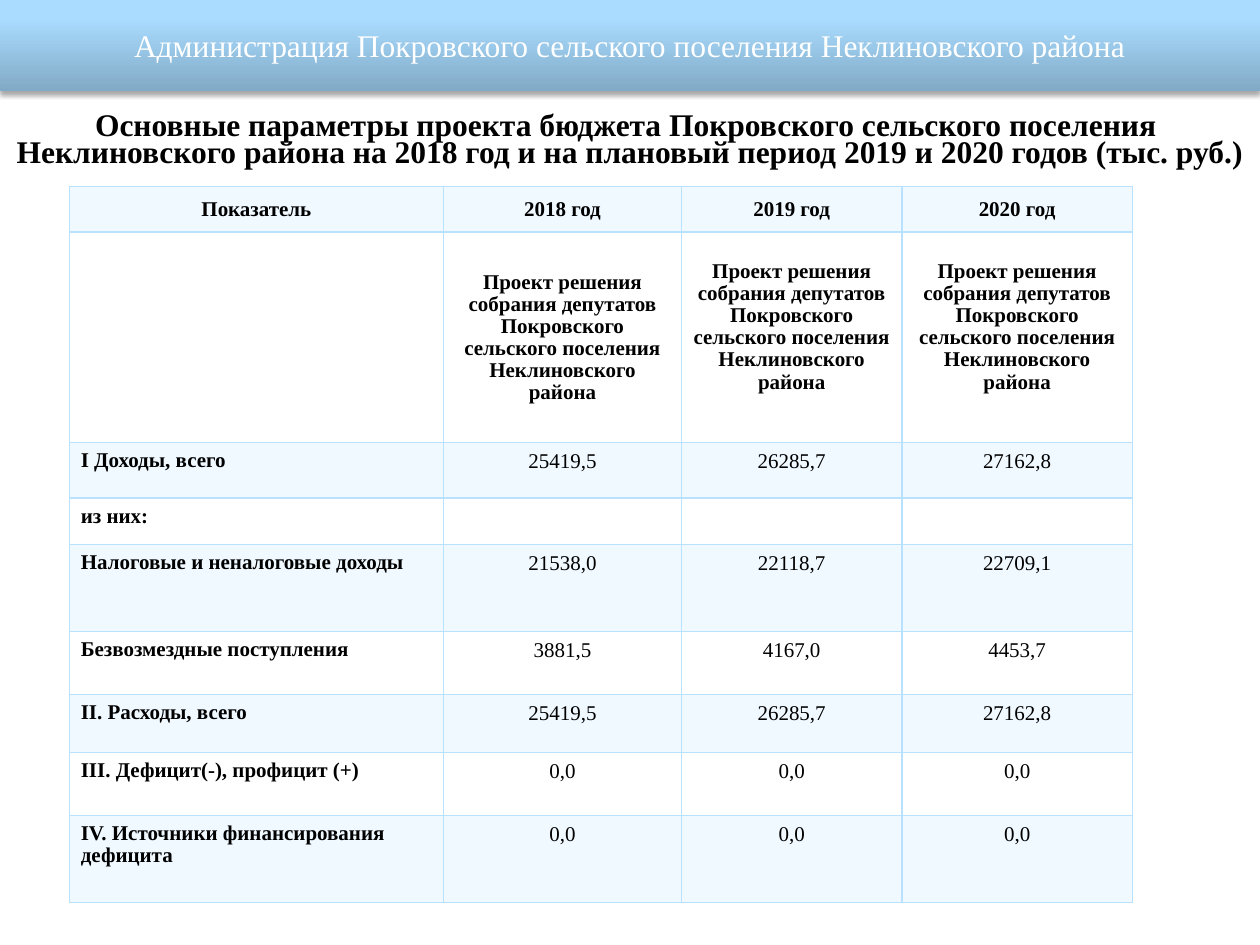
from lxml.etree import SubElement
from pptx import Presentation
from pptx.dml.color import RGBColor
from pptx.enum.shapes import MSO_SHAPE
from pptx.enum.text import MSO_ANCHOR, MSO_AUTO_SIZE, PP_ALIGN
from pptx.oxml import parse_xml
from pptx.oxml.ns import nsdecls, qn
from pptx.util import Cm, Pt

FONT = "Times New Roman"
SKY = "B8E2FF"
PROJECT = ("Проект решения собрания депутатов Покровского "
           "сельского поселения Неклиновского района")
COLS = [7.54, 4.8, 4.44, 4.65]
HEIGHTS = [0.92, 4.24, 1.12, 0.94, 1.75, 1.27, 1.17, 1.27, 1.75]
ROWS = [
    ["Показатель", "2018 год", "2019 год", "2020 год"],
    ["", PROJECT, PROJECT, PROJECT],
    ["I Доходы, всего", "25419,5", "26285,7", "27162,8"],
    ["из них:", "", "", ""],
    ["Налоговые и неналоговые доходы", "21538,0", "22118,7", "22709,1"],
    ["Безвозмездные поступления", "3881,5", "4167,0", "4453,7"],
    ["II. Расходы, всего", "25419,5", "26285,7", "27162,8"],
    ["III. Дефицит(-), профицит (+)", "0,0", "0,0", "0,0"],
    ["IV. Источники финансирования дефицита", "0,0", "0,0", "0,0"],
]


def rgb(color):
    """Turn a hex string into a colour."""
    return RGBColor.from_string(color)


def style(p, size, color, bold=False, align=PP_ALIGN.CENTER, spacing=1.0):
    """Set alignment, line spacing and font of a paragraph."""
    p.alignment = align
    p.line_spacing = spacing
    f = p.font
    f.name, f.size, f.bold = FONT, Pt(size), bold
    f.color.rgb = rgb(color)


def add_title(s, text):
    """Place the slide title in its placeholder."""
    sp = s.shapes.title
    sp.left, sp.top, sp.width, sp.height = Cm(0), Cm(1.73), Cm(25.4), Cm(1.8)
    tf = sp.text_frame
    tf.text = text
    tf.word_wrap = True
    tf.auto_size = MSO_AUTO_SIZE.NONE
    tf.vertical_anchor = MSO_ANCHOR.BOTTOM
    tf.margin_left = tf.margin_right = Cm(0.25)
    tf.margin_top, tf.margin_bottom = Cm(0.03), Cm(0.13)
    style(tf.paragraphs[0], 18, "000000", True, spacing=0.7)


def add_borders(cell):
    """Draw a thin line on the four sides of a cell."""
    tc_pr = cell._tc.get_or_add_tcPr()
    for i, side in enumerate(("L", "R", "T", "B")):
        tc_pr.insert(i, parse_xml(
            f'<a:ln{side} {nsdecls("a")} w="12700"><a:solidFill>'
            f'<a:srgbClr val="{SKY}"/></a:solidFill></a:ln{side}>'))


def fill_cell(cell, text, row, col):
    """Write one table cell with the look of its row and column."""
    heading, label = row < 2, col == 0
    cell.text = text
    cell.vertical_anchor = MSO_ANCHOR.MIDDLE if heading else MSO_ANCHOR.TOP
    cell.margin_left = cell.margin_right = Cm(0.23)
    cell.margin_top = Cm(0.15 if heading or label else 0.18)
    cell.margin_bottom = Cm(0.57 if row == 1 and col > 1 else 0.13)
    align = PP_ALIGN.LEFT if label and not heading else PP_ALIGN.CENTER
    style(cell.text_frame.paragraphs[0], 12, "000000", heading or label,
          align, 0.95 if heading or label else 0.93)
    if row % 2:
        cell.fill.background()
    else:
        cell.fill.solid()
        cell.fill.fore_color.rgb = rgb(SKY)
        clr = cell._tc.tcPr.find(".//" + qn("a:srgbClr"))
        SubElement(clr, qn("a:alpha"), val="20000")
    add_borders(cell)


def add_budget_table(s):
    """Add the table of budget figures."""
    tbl = s.shapes.add_table(len(ROWS), len(COLS), Cm(1.4), Cm(3.76),
                             Cm(sum(COLS)), Cm(sum(HEIGHTS))).table
    tbl.first_row = tbl.horz_banding = False
    for column, width in zip(tbl.columns, COLS):
        column.width = Cm(width)
    for i, (height, texts) in enumerate(zip(HEIGHTS, ROWS)):
        tbl.rows[i].height = Cm(height)
        for j, text in enumerate(texts):
            fill_cell(tbl.cell(i, j), text, i, j)


def add_banner(s, text):
    """Add the shaded band with a soft shadow across the top."""
    sp = s.shapes.add_shape(MSO_SHAPE.RECTANGLE, 0, 0, Cm(25.4), Cm(1.83))
    sp.line.fill.background()
    stops = "".join(
        f'<a:gs pos="{pos}000"><a:srgbClr val="{color}"/></a:gs>'
        for pos, color in ((0, "81AAC6"), (80, "AADCFF"), (100, "ACDDFF")))
    sp_pr = sp._element.spPr
    sp_pr.find(qn("a:prstGeom")).addnext(parse_xml(
        f'<a:gradFill {nsdecls("a")} rotWithShape="1"><a:gsLst>{stops}'
        '</a:gsLst><a:lin ang="16200000" scaled="0"/></a:gradFill>'))
    sp_pr.append(parse_xml(
        f'<a:effectLst {nsdecls("a")}><a:outerShdw blurRad="39370" '
        'dist="22860" dir="5400000" rotWithShape="0"><a:srgbClr val="000000">'
        '<a:alpha val="35000"/></a:srgbClr></a:outerShdw></a:effectLst>'))
    tf = sp.text_frame
    tf.text = text
    tf.word_wrap = True
    tf.vertical_anchor = MSO_ANCHOR.MIDDLE
    style(tf.paragraphs[0], 18, "FFFFFF")


def main():
    """Build the slide and save it."""
    prs = Presentation()
    prs.slide_width, prs.slide_height = Cm(25.4), Cm(19.05)
    s = prs.slides.add_slide(prs.slide_layouts[5])
    add_title(s, "Основные параметры проекта бюджета Покровского сельского "
                 "поселения \vНеклиновского района на 2018 год и на плановый "
                 "период 2019 и 2020 годов (тыс. руб.)")
    add_budget_table(s)
    add_banner(s, "Администрация Покровского сельского поселения "
                  "Неклиновского района")
    prs.save("out.pptx")


if __name__ == "__main__":
    main()
